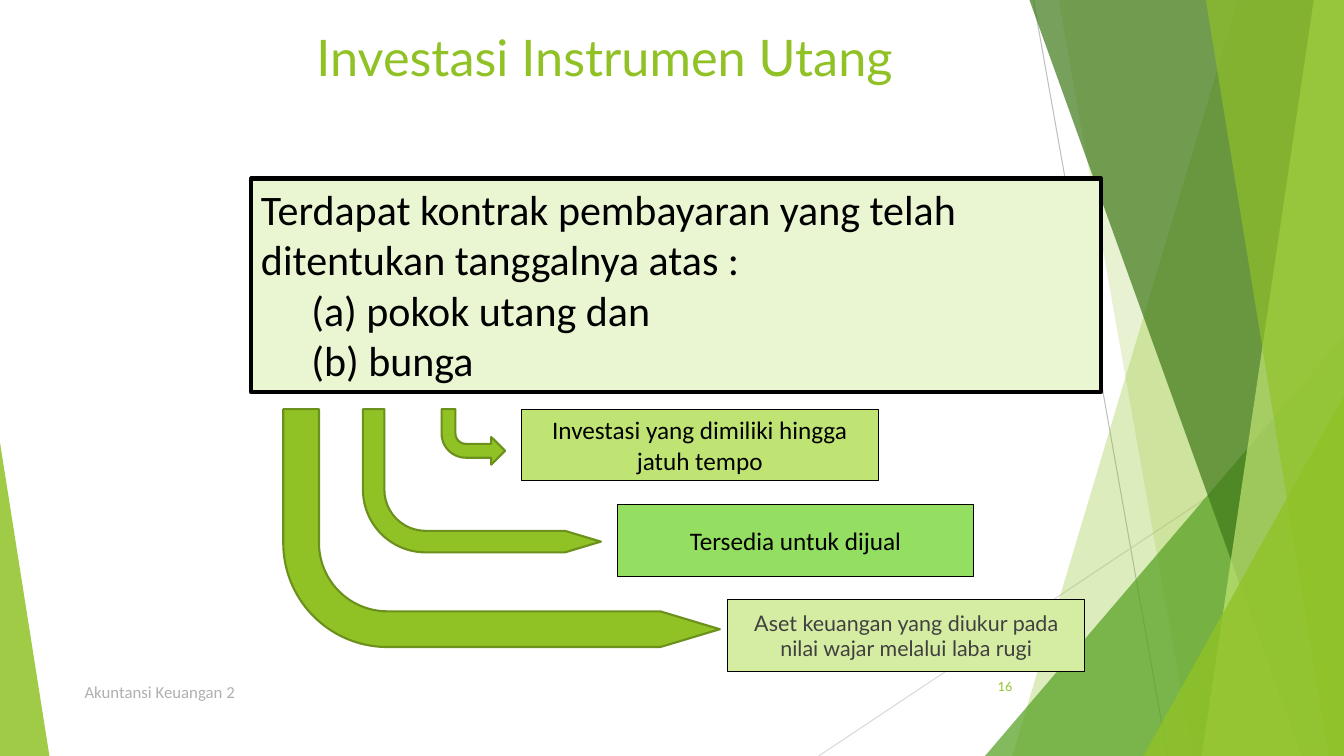
from pptx import Presentation
from pptx import util as u
from pptx.dml.color import RGBColor
from pptx.enum import shapes, text
from pptx.oxml.ns import qn
from lxml import etree

COLORS = {
    "green": "90C226", "leaf": "54A021", "forest": "3F7819", "lime": "C0E474",
    "mint": "94DE61", "pale": "D5EDA2", "cream": "EAF6D1", "olive": "6B901C",
    "black": "000000", "dark": "404040", "gray": "B0B0B0",
    "rule": "BFBFBF", "light_rule": "D9D9D9",
}
WIDTH, HEIGHT = 13.33, 7.5

RULES = [((10.25, 0), (11.58, HEIGHT), "rule"), ((WIDTH, 4.03), (8.12, HEIGHT), "light_rule")]
BACK_PANELS = [(12.28, 10.04, "green", 30), (10.5, 11.83, "green", 20)]
FRONT_PANELS = [(10.21, 12.91, "forest", 70), (13.03, 11.92, "lime", 70),
                (11.96, 13.18, "green", 65)]
BACK_TRIANGLES = [(9.77, 3.33, 3.56, 1, "leaf", 72)]
FRONT_TRIANGLES = [(11.34, 3.93, 1.99, 1, "green", 80), (0, 4.39, 0.49, 0, "green", 85)]

LABELS = [
    ((3.04, 0.21, 7.81, 1.05), "Investasi Instrumen Utang", 36, "Lato", "green", "TOP", "LEFT"),
    ((0.74, 6.61, 6.89, 0.4), "Akuntansi Keuangan 2", 12, "Calibri", "gray", "BOTTOM", "LEFT"),
    ((9.39, 6.61, 0.75, 0.4), "16", 9, "Lato", "green", "MIDDLE", "RIGHT"),
]
CONTRACT_BOX = (2.49, 1.77, 8.43, 2.12)
CONTRACT_LINES = [
    ("Terdapat kontrak pembayaran yang telah ditentukan tanggalnya atas :", 0),
    ("(a) pokok utang dan", 0.5),
    ("(b) bunga", 0.5),
]
CATEGORY_TOP, CATEGORY_STEP = 4.06, 0.945
CATEGORY_SIZE = (3.54, 0.71)
CATEGORIES = [
    (5.17, "Investasi yang dimiliki hingga jatuh tempo", 18, "Calibri", "black", "lime", 4),
    (6.12, "Tersedia untuk dijual", 18, "Calibri", "black", "mint", 4),
    (7.22, "Aset keuangan yang diukur pada nilai wajar melalui laba rugi",
     15.3, "Lato", "dark", "pale", 10),
]
LONG_ARROW = (0.25, 0.075, 0.25, 0.438)
ARROWS = [(4.38, 0.63, 0.55, ()), (3.6, 2.36, 1.42, LONG_ARROW), (2.81, 4.33, 2.36, LONG_ARROW)]

presentation = Presentation()
presentation.slide_width = u.Inches(WIDTH)
presentation.slide_height = u.Inches(HEIGHT)
slide = presentation.slides.add_slide(presentation.slide_layouts[6])


def color(name):
    return RGBColor.from_string(COLORS[name])


def paint(shape, fill, line=None, line_width=0.75, opacity=100):
    shape.shadow.inherit = False
    shape.fill.solid()
    shape.fill.fore_color.rgb = color(fill)
    if opacity < 100:
        tint = shape.fill._xPr.find(qn("a:solidFill"))[0]
        etree.SubElement(tint, qn("a:alpha")).set("val", str(opacity * 1000))
    if line:
        shape.line.color.rgb = color(line)
        shape.line.width = u.Pt(line_width)
    else:
        shape.line.fill.background()


def add_preset(kind, box, adjustments=()):
    shape = slide.shapes.add_shape(kind, *map(u.Inches, box))
    for index, value in enumerate(adjustments):
        shape.adjustments[index] = value
    return shape


def write(paragraph, content, size, font, ink, align="LEFT", before=0):
    paragraph.alignment = getattr(text.PP_ALIGN, align)
    paragraph.space_before = u.Pt(before)
    run = paragraph.add_run()
    run.text = content
    run.font.size = u.Pt(size)
    run.font.name = font
    run.font.color.rgb = color(ink)


def prepare_frame(shape, anchor):
    frame = shape.text_frame
    frame.word_wrap = True
    frame.vertical_anchor = getattr(text.MSO_ANCHOR, anchor)
    return frame


def add_rules():
    for start, end, ink in RULES:
        rule = slide.shapes.add_connector(
            shapes.MSO_CONNECTOR.STRAIGHT, *map(u.Inches, start + end))
        rule.line.color.rgb = color(ink)
        rule.line.width = u.Pt(0.75)
        etree.SubElement(rule._element.spPr, qn("a:effectLst"))


def add_panels(panels):
    for top_left, bottom_left, fill, opacity in panels:
        corners = [(top_left, 0), (WIDTH, 0), (WIDTH, HEIGHT), (bottom_left, HEIGHT)]
        points = [(u.Inches(x), u.Inches(y)) for x, y in corners]
        builder = slide.shapes.build_freeform(*points[0])
        builder.add_line_segments(points[1:], close=True)
        paint(builder.convert_to_shape(), fill, opacity=opacity)


def add_triangles(triangles):
    for left, top, width, apex, fill, opacity in triangles:
        box = (left, top, width, HEIGHT - top)
        triangle = add_preset(shapes.MSO_SHAPE.ISOSCELES_TRIANGLE, box, (apex,))
        paint(triangle, fill, opacity=opacity)


def add_labels():
    for box, content, size, font, ink, anchor, align in LABELS:
        label = slide.shapes.add_textbox(*map(u.Inches, box))
        frame = prepare_frame(label, anchor)
        write(frame.paragraphs[0], content, size, font, ink, align)


def add_contract():
    contract = add_preset(shapes.MSO_SHAPE.RECTANGLE, CONTRACT_BOX)
    paint(contract, "cream", "black", 3)
    frame = prepare_frame(contract, "TOP")
    frame.auto_size = text.MSO_AUTO_SIZE.SHAPE_TO_FIT_TEXT
    for index, (content, indent) in enumerate(CONTRACT_LINES):
        paragraph = frame.add_paragraph() if index else frame.paragraphs[0]
        write(paragraph, content, 30, "Calibri", "black")
        paragraph._p.get_or_add_pPr().set("marL", str(u.Inches(indent)))


def add_categories():
    for index, (left, content, size, font, ink, fill, before) in enumerate(CATEGORIES):
        top = CATEGORY_TOP + index * CATEGORY_STEP
        category = add_preset(shapes.MSO_SHAPE.RECTANGLE, (left, top, *CATEGORY_SIZE))
        paint(category, fill, "black")
        frame = prepare_frame(category, "MIDDLE")
        write(frame.paragraphs[0], content, size, font, ink, "CENTER", before)


def add_arrows():
    for left, width, height, adjustments in ARROWS:
        box = (left, CATEGORY_TOP, width, height)
        arrow = add_preset(shapes.MSO_SHAPE.BENT_ARROW, box, adjustments)
        arrow._element.spPr.find(qn("a:xfrm")).set("flipV", "1")
        paint(arrow, "green", "olive", 1.5)


add_rules()
add_panels(BACK_PANELS)
add_triangles(BACK_TRIANGLES)
add_panels(FRONT_PANELS)
add_triangles(FRONT_TRIANGLES)
add_labels()
add_contract()
add_categories()
add_arrows()
presentation.save("out.pptx")
